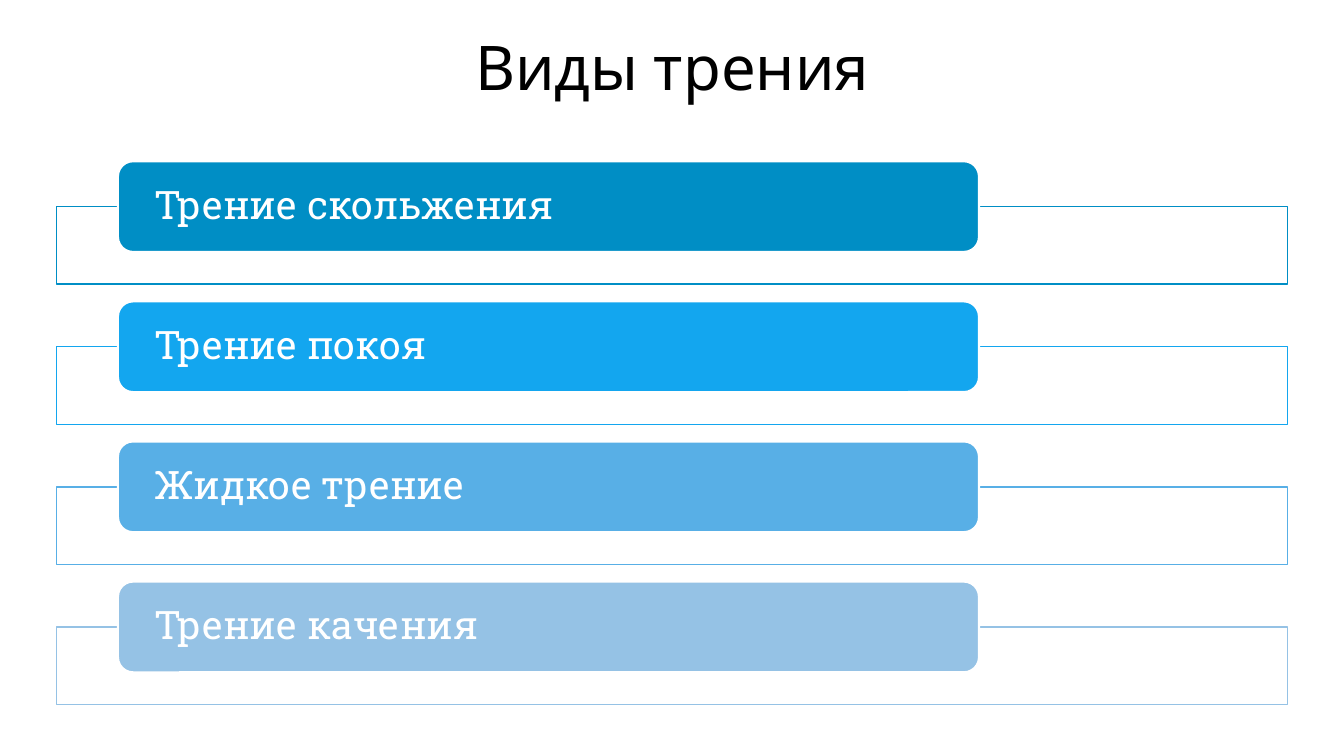
import pptx
import pptx.util
from pptx.dml.color import RGBColor
from pptx.enum.shapes import MSO_SHAPE
from pptx.enum.text import MSO_ANCHOR, PP_ALIGN
from pptx.util import Inches

BLACK = RGBColor(0x00, 0x00, 0x00)
WHITE = RGBColor(0xFF, 0xFF, 0xFF)
DEEP_BLUE = RGBColor(0x00, 0x8E, 0xC5)
BRIGHT_BLUE = RGBColor(0x13, 0xA6, 0xEF)
SOFT_BLUE = RGBColor(0x58, 0xAF, 0xE6)
PALE_BLUE = RGBColor(0x95, 0xC2, 0xE5)

FRICTION_TYPES = [
    ("Трение скольжения", DEEP_BLUE),
    ("Трение покоя", BRIGHT_BLUE),
    ("Жидкое трение", SOFT_BLUE),
    ("Трение качения", PALE_BLUE),
]
FIRST_TOP = 1.6
ROW_STEP = 1.39


class FrictionSlide:
    title_font = "League Spartan"
    label_font = "Roboto Slab"

    def __init__(self, deck):
        self.page = deck.slides.add_slide(deck.slide_layouts[5])

    def set_text(self, shape, text, font, size, color, align, anchor, side=0):
        frame = shape.text_frame
        frame.word_wrap = True
        frame.vertical_anchor = anchor
        frame.margin_left = frame.margin_right = Inches(side)
        frame.margin_top = frame.margin_bottom = 0
        para = frame.paragraphs[0]
        para.text = text
        para.alignment = align
        para.font.name = font
        para.font.size = pptx.util.Pt(size)
        para.font.color.rgb = color
        return para

    def title(self, text):
        box = self.page.shapes.title
        box.left, box.top = Inches(0.67), Inches(0.29)
        box.width, box.height = Inches(12), Inches(0.77)
        self.set_text(box, text, self.title_font, 44, BLACK,
                      PP_ALIGN.CENTER, MSO_ANCHOR.TOP)

    def shape(self, kind, left, top, width, height, fill, line, weight):
        shape = self.page.shapes.add_shape(
            kind, Inches(left), Inches(top), Inches(width), Inches(height))
        shape.shadow.inherit = False
        shape.fill.solid()
        shape.fill.fore_color.rgb = fill
        shape.line.color.rgb = line
        shape.line.width = pptx.util.Pt(weight)
        return shape

    def frame(self, top, color):
        self.shape(MSO_SHAPE.RECTANGLE, 0.56, top, 12.21, 0.77,
                   WHITE, color, 1)

    def label(self, top, text, color):
        pill = self.shape(MSO_SHAPE.ROUNDED_RECTANGLE, 1.17, top, 8.54, 0.9,
                          color, WHITE, 1.5)
        para = self.set_text(pill, text, self.label_font, 28, WHITE,
                             PP_ALIGN.LEFT, MSO_ANCHOR.MIDDLE, side=0.32)
        para.line_spacing = 0.9


def main():
    deck = pptx.Presentation()
    deck.slide_width, deck.slide_height = Inches(13.33), Inches(7.5)
    slide = FrictionSlide(deck)

    # Heading
    slide.title("Виды трения")

    # One outlined frame with a label on its top edge per friction type
    for row, (name, color) in enumerate(FRICTION_TYPES):
        top = FIRST_TOP + row * ROW_STEP
        slide.frame(top + 0.45, color)
        slide.label(top, name, color)

    deck.save("out.pptx")


if __name__ == "__main__":
    main()
